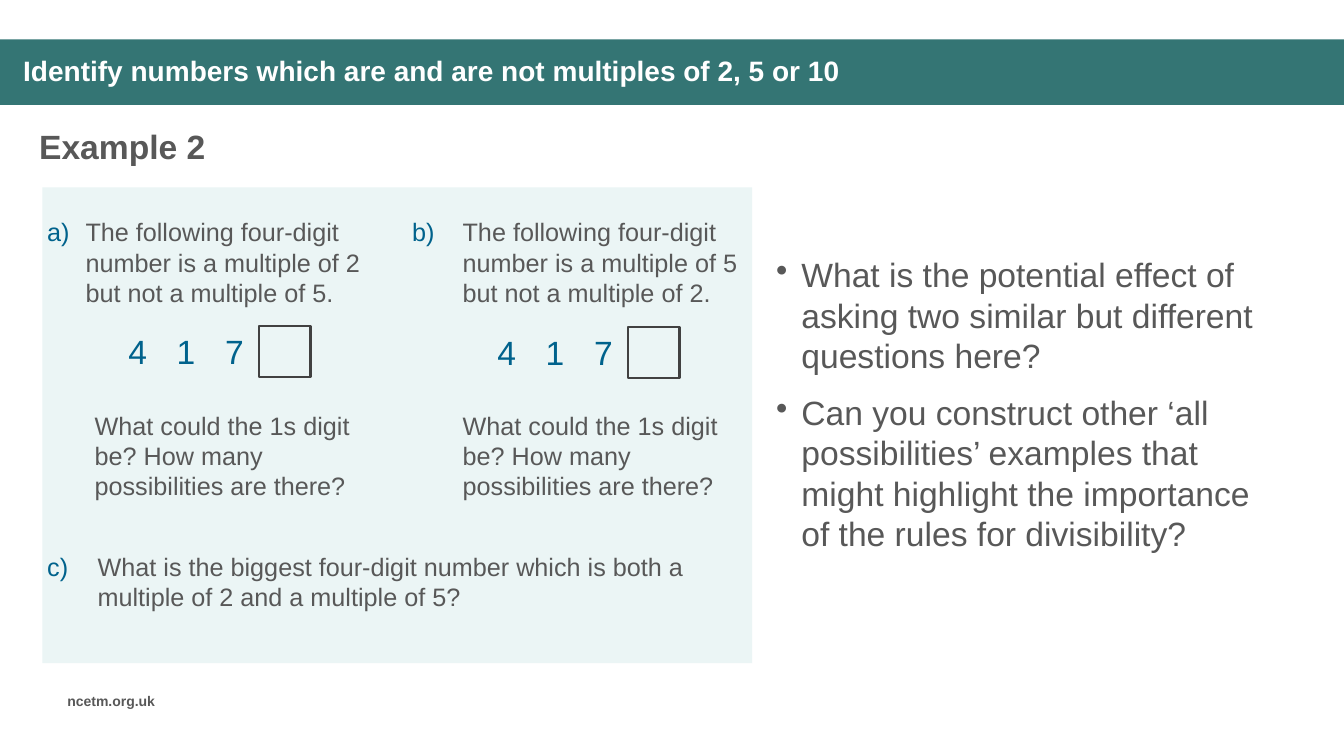
"""Build the slide on multiples of 2, 5 and 10."""
from dataclasses import dataclass

from lxml.etree import SubElement
from pptx import Presentation
from pptx.dml.color import RGBColor as Rgb
from pptx.enum.shapes import MSO_SHAPE as Shape
from pptx.enum.text import MSO_ANCHOR as Anchor, MSO_AUTO_SIZE as Fit, PP_ALIGN as Align
from pptx.oxml.ns import qn
from pptx.util import Inches, Pt


@dataclass(frozen=True)
class Theme:
    font: str = "Arial"
    white: str = "FFFFFF"
    band: str = "347574"
    panel: str = "EBF5F5"
    ink: str = "585858"
    accent: str = "00628C"
    outline: str = "414141"
    small: int = 10
    body: int = 18
    title: int = 20
    large: int = 24


def add_bullet(para, indent, hanging, char=None, start=None, color=None):
    props = para._p.get_or_add_pPr()
    props.set("marL", str(Inches(indent)))
    props.set("indent", str(-Inches(hanging)))
    if color:
        SubElement(SubElement(props, qn("a:buClr")), qn("a:srgbClr"), val=color)
    if char:
        SubElement(props, qn("a:buChar"), char=char)
    else:
        SubElement(props, qn("a:buAutoNum"), type="alphaLcParenR", startAt=str(start))


def write(box, *lines, font, size, color, bold=False, align=Align.LEFT, anchor=Anchor.TOP,
          fit=Fit.NONE, spacing=None, after=0, bullet=None):
    frame = box.text_frame
    frame.word_wrap = True
    frame.auto_size = fit
    frame.vertical_anchor = anchor
    for index, line in enumerate(lines):
        para = frame.add_paragraph() if index else frame.paragraphs[0]
        para.alignment = align
        para.line_spacing = spacing
        para.space_before = Pt(0)
        para.space_after = Pt(after)
        if bullet:
            add_bullet(para, **bullet)
        span = para.add_run()
        span.text = line
        span.font.name = font
        span.font.size = Pt(size)
        span.font.bold = bold
        span.font.color.rgb = Rgb.from_string(color)


class SlideBuilder:
    def __init__(self, page, theme):
        self.page = page
        self.theme = theme

    def rectangle(self, *place, fill=None, line=None, parent=None):
        shapes = (parent or self.page).shapes
        box = shapes.add_shape(Shape.RECTANGLE, *map(Inches, place))
        box.shadow.inherit = False
        if fill:
            box.fill.solid()
            box.fill.fore_color.rgb = Rgb.from_string(fill)
        else:
            box.fill.background()
        if line:
            box.line.color.rgb = Rgb.from_string(line)
            box.line.width = Pt(1.5)
        else:
            box.line.fill.background()

    def text(self, *lines, place, parent=None, **style):
        box = (parent or self.page).shapes.add_textbox(*map(Inches, place))
        defaults = dict(font=self.theme.font, size=self.theme.body, color=self.theme.ink)
        write(box, *lines, **(defaults | style))

    def title(self, line, place):
        box = self.page.shapes.title
        box.left, box.top, box.width, box.height = map(Inches, place)
        self.page.shapes._spTree.append(box._element)
        write(box, line, font=self.theme.font, size=self.theme.title, color=self.theme.white,
              bold=True, anchor=Anchor.MIDDLE, spacing=0.9)

    def question(self, line, place, start=None, indent=0.5):
        bullet = start and dict(indent=indent, hanging=indent, start=start,
                                color=self.theme.accent)
        self.text(line, place=place, fit=Fit.SHAPE_TO_FIT_TEXT, after=4, bullet=bullet)

    def missing_digit(self, digits, left, top, side=0.51, step=0.48):
        group = self.page.shapes.add_group_shape()
        for index, digit in enumerate(digits):
            self.text(digit, place=(left + index * step, top, side, side), parent=group,
                      size=self.theme.large, color=self.theme.accent,
                      align=Align.CENTER, anchor=Anchor.MIDDLE)
        self.rectangle(left + 1.46, top, side, side, line=self.theme.outline, parent=group)


def main():
    theme = Theme()
    deck = Presentation()
    deck.slide_width, deck.slide_height = Inches(13.33), Inches(7.5)
    slide = SlideBuilder(deck.slides.add_slide(deck.slide_layouts[5]), theme)

    slide.rectangle(0, 0.39, 13.33, 0.65, fill=theme.band)
    slide.text("ncetm.org.uk", place=(0.57, 6.82, 1.21, 0.27), size=theme.small, bold=True,
               fit=Fit.SHAPE_TO_FIT_TEXT)
    slide.title("Identify numbers which are and are not multiples of 2, 5 or 10",
                (0.13, 0.48, 12.32, 0.47))
    slide.text("Example 2", place=(0.29, 1.2, 6.66, 0.5), size=theme.large, bold=True,
               fit=Fit.SHAPE_TO_FIT_TEXT)
    slide.text("What is the potential effect of asking two similar but different questions here?",
               "Can you construct other ‘all possibilities’ examples that might highlight "
               "the importance of the rules for divisibility?",
               place=(7.46, 1.9, 5.35, 4.21), size=theme.large, anchor=Anchor.MIDDLE,
               after=12, bullet=dict(indent=0.39, hanging=0.25, char="•"))

    slide.rectangle(0.42, 1.86, 7.04, 4.72, fill=theme.panel)
    parts = [
        (2, 5, (0.37, 2.1, 3.46, 1.01), 0.38, 0.84, (1.11, 3.23)),
        (5, 2, (3.99, 2.1, 3.49, 1.01), 0.5, 4.49, (4.77, 3.24)),
    ]
    for start, (factor, other, place, indent, prompt_left, corner) in enumerate(parts, 1):
        slide.question(f"The following four-digit number is a multiple of {factor} "
                       f"but not a multiple of {other}.", place, start, indent)
        slide.missing_digit("417", *corner)
        slide.question("What could the 1s digit be? How many possibilities are there?",
                       (prompt_left, 4.02, 2.99, 1.01))
    slide.question("What is the biggest four-digit number which is both a multiple of 2 "
                   "and a multiple of 5?", (0.37, 5.42, 7.28, 0.71), 3)
    deck.save("out.pptx")


if __name__ == "__main__":
    main()
